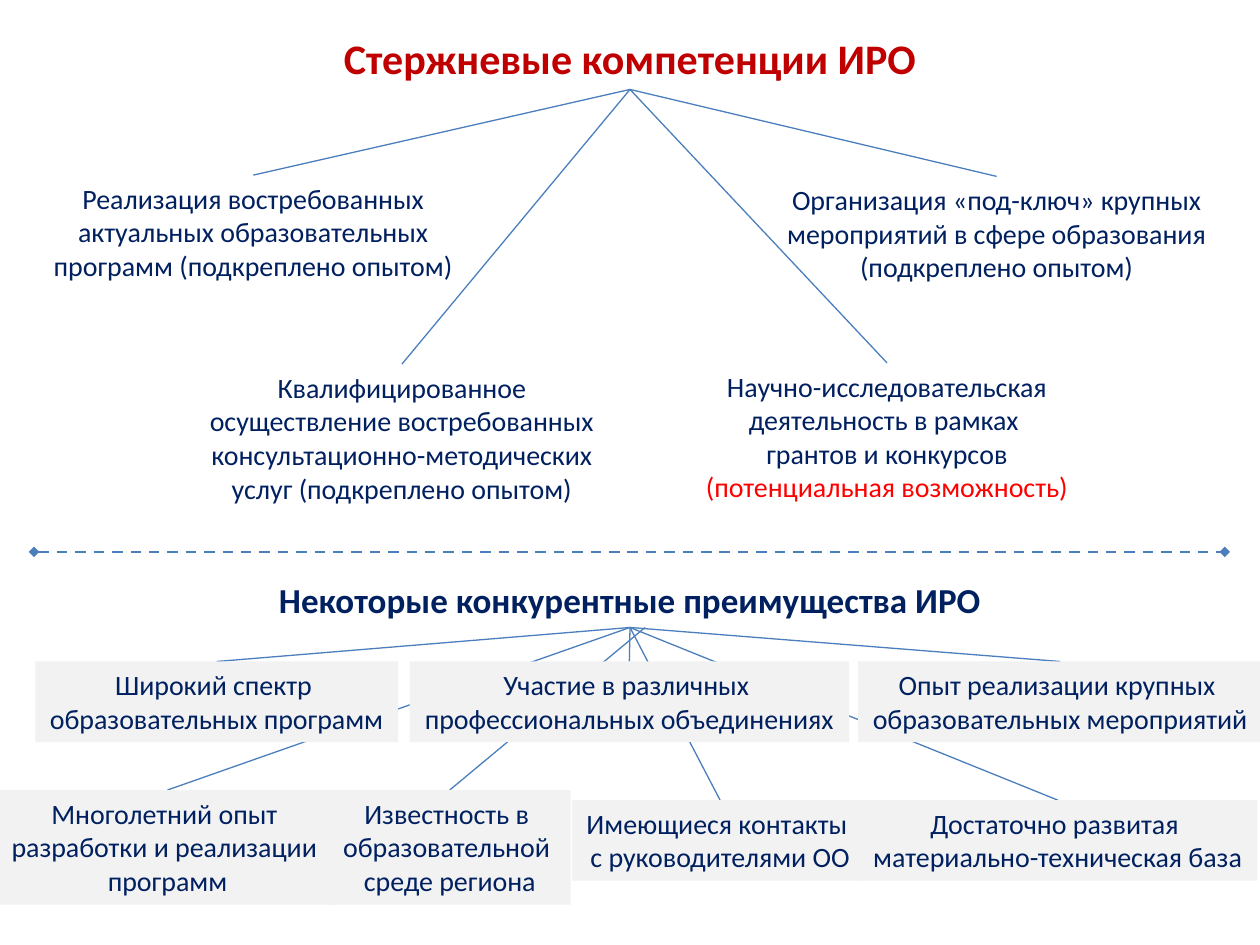
from dataclasses import dataclass

from lxml.etree import SubElement
from pptx import Presentation
from pptx.dml.color import RGBColor
from pptx.enum.dml import MSO_LINE
from pptx.enum.shapes import MSO_CONNECTOR, MSO_SHAPE
from pptx.enum.text import MSO_ANCHOR, MSO_AUTO_SIZE, PP_ALIGN
from pptx.oxml.ns import qn
from pptx.util import Inches, Pt

TOP, BOTTOM = 0, 2


@dataclass(frozen=True)
class Theme:
    """Colours, font and type sizes of the slide."""

    font: str = "Calibri"
    title: RGBColor = RGBColor(0xC0, 0x00, 0x00)
    text: RGBColor = RGBColor(0x00, 0x20, 0x60)
    accent: RGBColor = RGBColor(0xFF, 0x00, 0x00)
    line: RGBColor = RGBColor(0x4B, 0x7E, 0xBC)
    box: RGBColor = RGBColor(0xF2, 0xF2, 0xF2)
    title_size: int = 24
    heading_size: int = 20
    body_size: int = 16


class SlideBuilder:
    """Draws styled elements on one slide."""

    def __init__(self, slide, theme):
        self.slide = slide
        self.theme = theme

    def set_text(self, shape, text, size, color, bold=False, wrap=True):
        """Put centred, formatted text into a shape."""
        frame = shape.text_frame
        frame.text = text
        frame.word_wrap = wrap
        frame.auto_size = MSO_AUTO_SIZE.NONE
        frame.vertical_anchor = MSO_ANCHOR.TOP
        for paragraph in frame.paragraphs:
            paragraph.alignment = PP_ALIGN.CENTER
            for run in paragraph.runs:
                run.font.name = self.theme.font
                run.font.size = Pt(size)
                run.font.bold = bold
                run.font.color.rgb = color
        return shape

    def title(self, text, left, top, width, height):
        """Place and fill the title placeholder."""
        shape = self.slide.shapes.title
        shape.left, shape.top = Inches(left), Inches(top)
        shape.width, shape.height = Inches(width), Inches(height)
        return self.set_text(shape, text, self.theme.title_size, self.theme.title, True)

    def heading(self, text, *area):
        """Add a bold section heading."""
        shape = self.slide.shapes.add_textbox(*map(Inches, area))
        return self.set_text(shape, text, self.theme.heading_size, self.theme.text, True)

    def label(self, text, *area):
        """Add plain wrapped text."""
        shape = self.slide.shapes.add_textbox(*map(Inches, area))
        return self.set_text(shape, text, self.theme.body_size, self.theme.text)

    def box(self, text, *area):
        """Add a grey rectangle with text."""
        shape = self.slide.shapes.add_shape(MSO_SHAPE.RECTANGLE, *map(Inches, area))
        shape.shadow.inherit = False
        shape.fill.solid()
        shape.fill.fore_color.rgb = self.theme.box
        shape.line.fill.background()
        return self.set_text(shape, text, self.theme.body_size, self.theme.text, wrap=False)

    def line(self, start, end, width=0.75):
        """Add a straight line between two points."""
        points = map(Inches, (*start, *end))
        connector = self.slide.shapes.add_connector(MSO_CONNECTOR.STRAIGHT, *points)
        connector.line.color.rgb = self.theme.line
        connector.line.width = Pt(width)
        SubElement(connector._element.spPr, qn("a:effectLst"))
        return connector

    def branch(self, heading, target, start=None):
        """Join a heading to a target, behind all other elements."""
        connector = self.line(start or (0, 0), (0, 0))
        if start is None:
            connector.begin_connect(heading, BOTTOM)
        connector.end_connect(target, TOP)
        self.slide.shapes._spTree.insert(2, connector._element)

    def divider(self, start, end):
        """Add a dashed line with diamond ends."""
        connector = self.line(start, end, 1.5)
        connector.line.dash_style = MSO_LINE.DASH
        outline = connector._element.spPr.find(qn("a:ln"))
        for tag in ("a:headEnd", "a:tailEnd"):
            SubElement(outline, qn(tag), type="diamond")


def main():
    """Build and save the slide."""
    presentation = Presentation()
    presentation.slide_width, presentation.slide_height = Inches(10), Inches(7.5)
    slide = presentation.slides.add_slide(presentation.slide_layouts[5])
    theme = Theme()
    builder = SlideBuilder(slide, theme)

    title = builder.title("Стержневые компетенции ИРО", 0.27, 0.21, 9.46, 0.5)
    competencies = [
        ("Реализация востребованных актуальных образовательных программ "
         "(подкреплено опытом)", 0.28, 1.39, 3.46, 0.91),
        ("Квалифицированное осуществление востребованных "
         "консультационно-методических услуг (подкреплено опытом)",
         1.46, 2.89, 3.46, 1.18),
        ("Научно-исследовательская деятельность в рамках \nгрантов и конкурсов\n"
         "(потенциальная возможность)", 5.31, 2.88, 3.46, 1.18),
        ("Организация «под-ключ» крупных мероприятий в сфере образования "
         "(подкреплено опытом)", 6.1, 1.4, 3.62, 0.91),
    ]
    labels = [builder.label(*competency) for competency in competencies]
    for label in labels:
        builder.branch(title, label)
    potential = labels[2].text_frame.paragraphs[-1]
    potential.runs[0].font.color.rgb = theme.accent

    builder.divider((0.27, 4.38), (9.72, 4.38))

    heading = builder.heading(
        "Некоторые конкурентные преимущества ИРО", 0.27, 4.54, 9.46, 0.44)
    advantages = [
        ("Многолетний опыт \nразработки и реализации \nпрограмм", 0, 6.27, 2.66, 0.91),
        ("Известность в \nобразовательной \nсреде региона", 2.61, 6.27, 1.92, 0.91),
        ("Имеющиеся контакты \nс руководителями ОО", 4.54, 6.35, 2.35, 0.64),
        ("Достаточно развитая \nматериально-техническая база", 6.81, 6.35, 3.17, 0.64),
        ("Широкий спектр \nобразовательных программ", 0.28, 5.25, 2.88, 0.64),
        ("Участие в различных \nпрофессиональных объединениях", 3.25, 5.25, 3.49, 0.64),
        ("Опыт реализации крупных \nобразовательных мероприятий",
         6.81, 5.25, 3.21, 0.64),
    ]
    shifted_starts = {1: (5.12, 4.98)}
    for index, advantage in enumerate(advantages):
        box = builder.box(*advantage)
        builder.branch(heading, box, shifted_starts.get(index))

    presentation.save("out.pptx")


if __name__ == "__main__":
    main()
